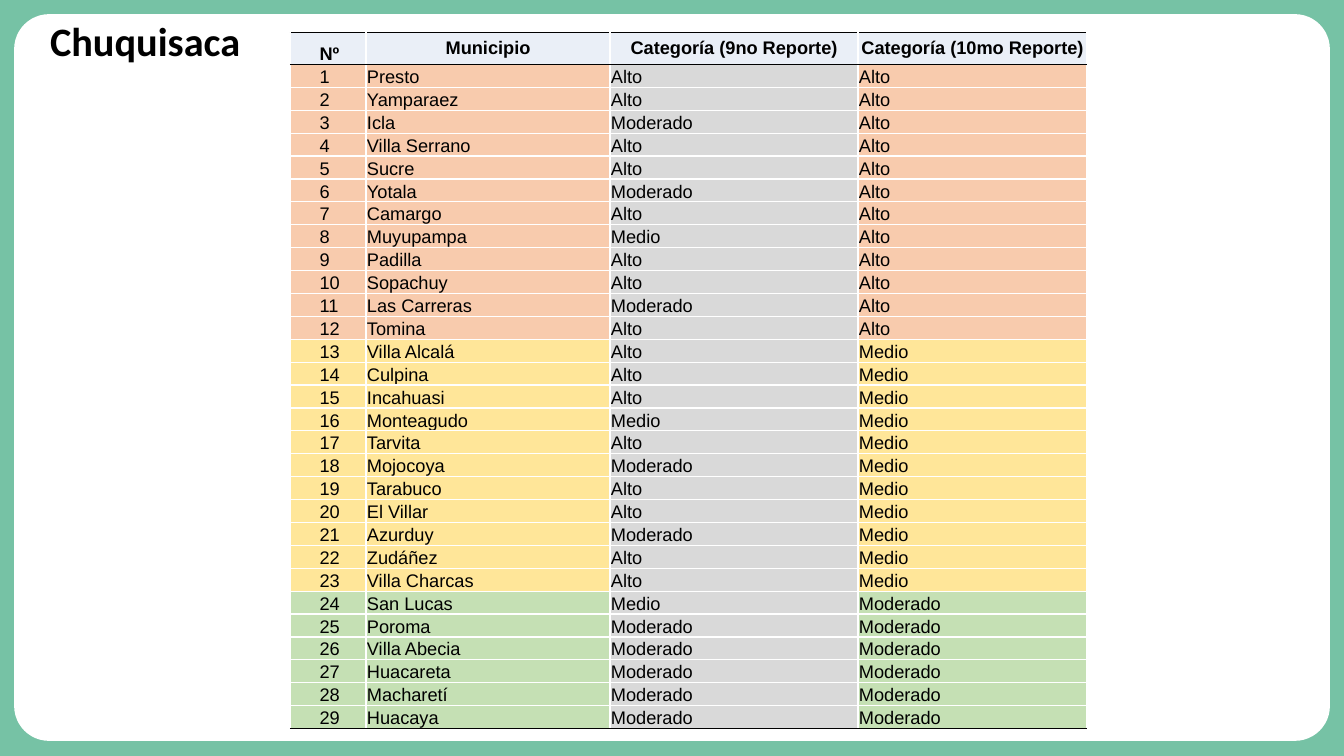
from dataclasses import dataclass

from lxml import etree
from pptx import Presentation
from pptx.dml.color import RGBColor
from pptx.enum.shapes import MSO_SHAPE
from pptx.enum.text import MSO_ANCHOR, PP_ALIGN
from pptx.oxml.ns import qn
from pptx.table import _Cell
from pptx.text.text import TextFrame
from pptx.util import Inches, Pt

ROUND = MSO_SHAPE.ROUNDED_RECTANGLE
MIDDLE, BOTTOM = MSO_ANCHOR.MIDDLE, MSO_ANCHOR.BOTTOM
LEFT, CENTER = PP_ALIGN.LEFT, PP_ALIGN.CENTER

GREEN, WHITE, BLACK = "76C2A5", "FFFFFF", "000000"
PALE, GRAY = "EAEFF7", "D9D9D9"
TINTS = {"Alto": "F8CBAD", "Medio": "FFE699", "Moderado": "C5E0B4"}

HEADS = ["Nº", "Municipio", "Categoría (9no Reporte)", "Categoría (10mo Reporte)"]
WIDTHS = [0.75, 2.42, 2.46, 2.27]
TABLE_TOP, HEAD_H, TABLE_H = 0.32, 0.32, 6.78
INDENT = 0.29


@dataclass
class Town:
    name: str
    prior: str
    now: str


TOWNS = [
    Town("Presto", "Alto", "Alto"),
    Town("Yamparaez", "Alto", "Alto"),
    Town("Icla", "Moderado", "Alto"),
    Town("Villa Serrano", "Alto", "Alto"),
    Town("Sucre", "Alto", "Alto"),
    Town("Yotala", "Moderado", "Alto"),
    Town("Camargo", "Alto", "Alto"),
    Town("Muyupampa", "Medio", "Alto"),
    Town("Padilla", "Alto", "Alto"),
    Town("Sopachuy", "Alto", "Alto"),
    Town("Las Carreras", "Moderado", "Alto"),
    Town("Tomina", "Alto", "Alto"),
    Town("Villa Alcalá", "Alto", "Medio"),
    Town("Culpina", "Alto", "Medio"),
    Town("Incahuasi", "Alto", "Medio"),
    Town("Monteagudo", "Medio", "Medio"),
    Town("Tarvita", "Alto", "Medio"),
    Town("Mojocoya", "Moderado", "Medio"),
    Town("Tarabuco", "Alto", "Medio"),
    Town("El Villar", "Alto", "Medio"),
    Town("Azurduy", "Moderado", "Medio"),
    Town("Zudáñez", "Alto", "Medio"),
    Town("Villa Charcas", "Alto", "Medio"),
    Town("San Lucas", "Medio", "Moderado"),
    Town("Poroma", "Moderado", "Moderado"),
    Town("Villa Abecia", "Moderado", "Moderado"),
    Town("Huacareta", "Moderado", "Moderado"),
    Town("Macharetí", "Moderado", "Moderado"),
    Town("Huacaya", "Moderado", "Moderado"),
]


def color(code: str) -> RGBColor:
    return RGBColor.from_string(code)


def write(frame: TextFrame, text: str, *, size: float = 13, font: str = "Arial",
          bold: bool = False, align: PP_ALIGN = LEFT, indent: float = 0,
          spacing: float = 1) -> None:
    par = frame.paragraphs[0]
    par.alignment = align
    par.line_spacing = spacing
    if indent:
        props = par._p.get_or_add_pPr()
        props.set("marL", "0")
        props.set("indent", str(Inches(indent)))
    run = par.add_run()
    run.text = text
    run.font.size = Pt(size)
    run.font.name = font
    run.font.bold = bold
    run.font.color.rgb = color(BLACK)


def border(cell: _Cell, top: str, bottom: str) -> None:
    props = cell._tc.get_or_add_tcPr()
    sides = {"lnL": WHITE, "lnR": WHITE, "lnT": top, "lnB": bottom}
    for side, code in sides.items():
        line = etree.SubElement(props, qn(f"a:{side}"), w=str(Pt(1)))
        fill = etree.SubElement(line, qn("a:solidFill"))
        etree.SubElement(fill, qn("a:srgbClr"), val=code)


def paint(cell: _Cell, code: str, anchor: MSO_ANCHOR, inset: float = 0) -> None:
    cell.margin_left = cell.margin_right = cell.margin_top = Inches(inset)
    cell.margin_bottom = 0
    cell.vertical_anchor = anchor
    cell.fill.solid()
    cell.fill.fore_color.rgb = color(code)


def main() -> None:
    prs = Presentation()
    prs.slide_width, prs.slide_height = Inches(13.33), Inches(7.5)
    slide = prs.slides.add_slide(prs.slide_layouts[6])

    # Background and white panel
    back = slide.background.fill
    back.solid()
    back.fore_color.rgb = color(GREEN)
    panel = slide.shapes.add_shape(
        ROUND, Inches(0.14), Inches(0.14), Inches(13.05), Inches(7.21))
    panel.adjustments[0] = 0.048
    panel.shadow.inherit = False
    panel.fill.solid()
    panel.fill.fore_color.rgb = color(WHITE)
    panel.line.fill.background()

    # Title
    title = slide.shapes.add_textbox(
        Inches(0.15), Inches(0.16), Inches(2.58), Inches(0.55)).text_frame
    title.word_wrap = True
    title.vertical_anchor = MIDDLE
    write(title, "Chuquisaca", size=28.8, font="Calibri", bold=True,
          align=CENTER, spacing=0.9)

    # Table grid
    last = len(TOWNS)
    table = slide.shapes.add_table(
        last + 1, len(HEADS), Inches(2.88), Inches(TABLE_TOP),
        Inches(sum(WIDTHS)), Inches(TABLE_H)).table
    table.first_row = table.horz_banding = False
    for col, width in zip(table.columns, WIDTHS):
        col.width = Inches(width)
    for row in table.rows:
        row.height = Inches((TABLE_H - HEAD_H) / last)
    table.rows[0].height = Inches(HEAD_H)

    # Header row
    for col, head in enumerate(HEADS):
        cell = table.cell(0, col)
        border(cell, BLACK, BLACK)
        paint(cell, PALE, MIDDLE if col else BOTTOM)
        write(cell.text_frame, head, bold=True, align=CENTER if col else LEFT,
              indent=0 if col else INDENT)

    # Town rows, tinted by the current category
    for num, town in enumerate(TOWNS, 1):
        tint = TINTS[town.now]
        texts = [str(num), town.name, town.prior, town.now]
        for col, (text, code) in enumerate(zip(texts, [tint, tint, GRAY, tint])):
            cell = table.cell(num, col)
            border(cell, BLACK if num == 1 else WHITE,
                   BLACK if num == last else WHITE)
            paint(cell, code, BOTTOM, 0.01 if col else 0)
            write(cell.text_frame, text, indent=0 if col else INDENT)

    prs.save("out.pptx")


if __name__ == "__main__":
    main()
